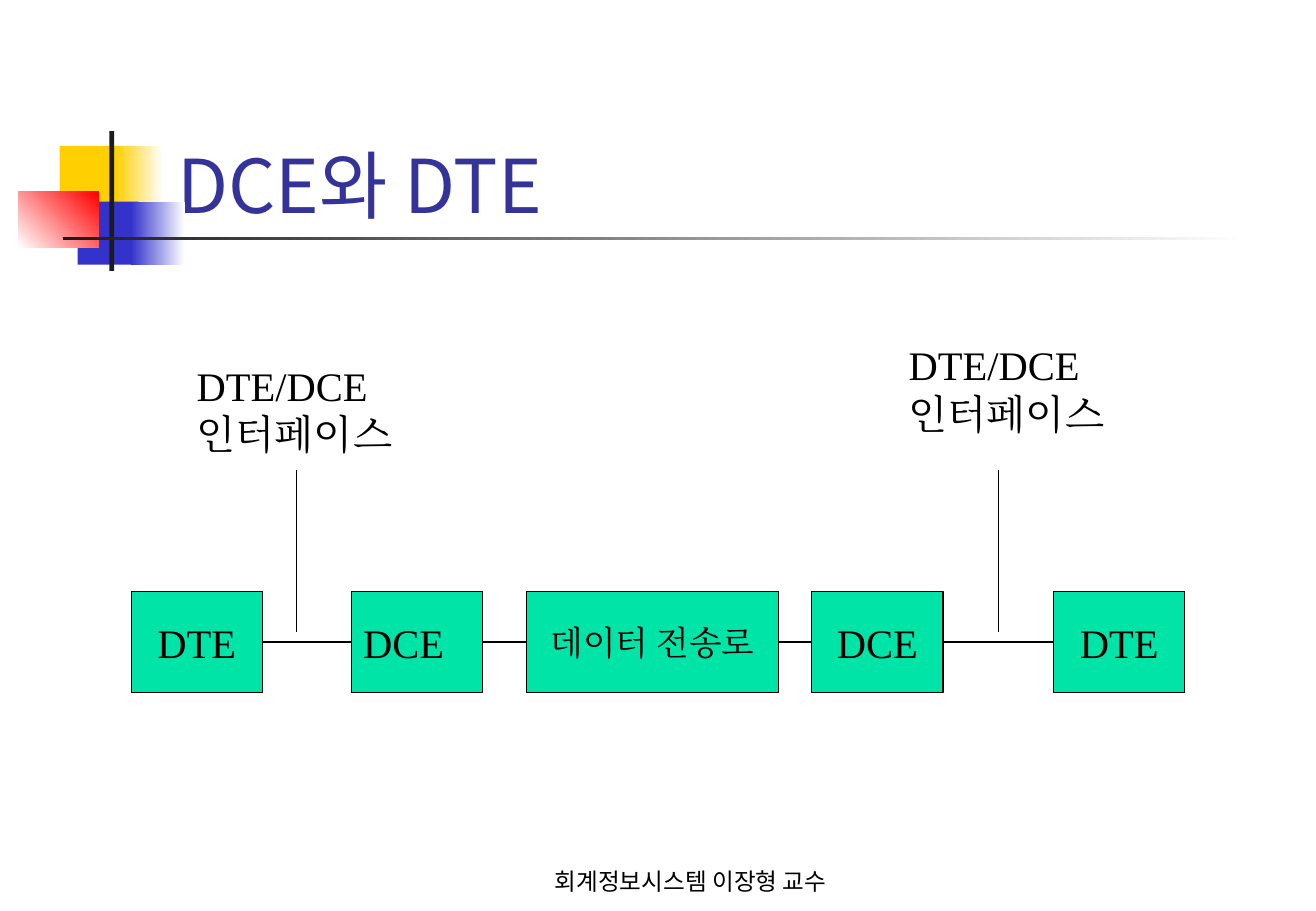
from itertools import pairwise

from lxml.etree import SubElement
from pptx import Presentation
from pptx.dml.color import RGBColor
from pptx.enum.shapes import MSO_CONNECTOR, MSO_SHAPE
from pptx.enum.text import MSO_ANCHOR, PP_ALIGN
from pptx.oxml.ns import qn
from pptx.util import Inches, Pt

COLORS = {
    "gold": "FFCF01", "blue": "3333CC", "red": "FF0000", "white": "FFFFFF",
    "ink": "1C1C1C", "title": "333399", "green": "00E4A8", "black": "000000",
}
SANS, SERIF = "Noto Sans CJK KR", "Times New Roman"

TITLE = "DCE와 DTE"
FOOTER = "회계정보시스템 이장형 교수"
INTERFACE = "DTE/DCE\n인터페이스"

# left, top, width, height, colours (two make a gradient), gradient angle
ORNAMENTS = [
    (0.49, 1.2, 0.52, 0.52, ["gold"], 0),
    (0.95, 1.2, 0.39, 0.52, ["gold", "white"], 0),
    (0.64, 1.66, 0.5, 0.52, ["blue"], 0),
    (1.08, 1.66, 0.44, 0.52, ["blue", "white"], 0),
    (0.15, 1.58, 0.66, 0.46, ["white", "red"], 45),
    (0.9, 1.08, 0.04, 1.15, ["ink"], 0),
    (0.52, 1.95, 9.75, 0.03, ["ink", "white"], 0),
]
# text, left, width, size, alignment
NODES = [
    ("DTE", 1.08, 1.08, 24, PP_ALIGN.CENTER),
    ("DCE", 2.89, 1.08, 24, PP_ALIGN.LEFT),
    ("데이터 전송로", 4.33, 2.08, 20, PP_ALIGN.CENTER),
    ("DCE", 6.68, 1.08, 24, PP_ALIGN.CENTER),
    ("DTE", 8.67, 1.08, 24, PP_ALIGN.CENTER),
]
NODE_TOP, NODE_H = 4.87, 0.83
# label left, label top, pointer x
INTERFACES = [(1.52, 2.92, 2.44), (7.38, 2.75, 8.22)]
POINTER_TOP, POINTER_BOTTOM = 3.87, 5.2


def rgb(name):
    return RGBColor.from_string(COLORS[name])


def write(shape, text, size, font, color="black", align=PP_ALIGN.LEFT,
          anchor=MSO_ANCHOR.TOP):
    tf = shape.text_frame
    tf.text = text
    tf.word_wrap = True
    tf.vertical_anchor = anchor
    for p in tf.paragraphs:
        p.alignment = align
        for r in p.runs:
            for key, value in {"size": Pt(size), "name": font}.items():
                setattr(r.font, key, value)
            r.font.color.rgb = rgb(color)
            SubElement(r.font._element, qn("a:ea"), typeface=font)


def add_rect(s, left, top, width, height, colors, angle=0):
    rect = s.shapes.add_shape(MSO_SHAPE.RECTANGLE, Inches(left), Inches(top),
                              Inches(width), Inches(height))
    rect.shadow.inherit = False
    rect.line.fill.background()
    if len(colors) == 1:
        rect.fill.solid()
        rect.fill.fore_color.rgb = rgb(colors[0])
    else:
        rect.fill.gradient()
        rect.fill.gradient_angle = angle
        for stop, color in zip(rect.fill.gradient_stops, colors):
            stop.color.rgb = rgb(color)
    return rect


def add_textbox(s, left, top, width, height):
    return s.shapes.add_textbox(Inches(left), Inches(top), Inches(width), Inches(height))


def outline(shape):
    shape.line.color.rgb = rgb("black")
    shape.line.width = Pt(0.75)


def add_line(s, x1, y1, x2, y2):
    line = s.shapes.add_connector(MSO_CONNECTOR.STRAIGHT, Inches(x1), Inches(y1),
                                  Inches(x2), Inches(y2))
    outline(line)
    SubElement(line._element.spPr, qn("a:effectLst"))
    return line


def main():
    prs = Presentation()
    prs.slide_width, prs.slide_height = Inches(10.83), Inches(7.5)
    s = prs.slides.add_slide(prs.slide_layouts[5])

    for left, top, width, height, colors, angle in ORNAMENTS:
        add_rect(s, left, top, width, height, colors, angle)

    title = s.shapes.title
    place = {"left": 1.36, "top": 0.68, "width": 9.23, "height": 1.25}
    for key, value in place.items():
        setattr(title, key, Inches(value))
    write(title, TITLE, 44, SANS, "title", anchor=MSO_ANCHOR.BOTTOM)

    write(add_textbox(s, 3.97, 6.92, 3.43, 0.5), FOOTER, 14, SANS,
          align=PP_ALIGN.CENTER, anchor=MSO_ANCHOR.BOTTOM)

    boxes = []
    for text, left, width, size, align in NODES:
        box = add_rect(s, left, NODE_TOP, width, NODE_H, ["green"])
        outline(box)
        write(box, text, size, SERIF, align=align, anchor=MSO_ANCHOR.MIDDLE)
        boxes.append(box)

    for a, b in pairwise(boxes):
        link = add_line(s, 0, 0, 0, 0)
        link.begin_connect(a, 3)
        link.end_connect(b, 1)

    for left, top, x in INTERFACES:
        write(add_textbox(s, left, top, 1.87, 0.9), INTERFACE, 24, SERIF)
        add_line(s, x, POINTER_TOP, x, POINTER_BOTTOM)

    prs.save("out.pptx")


if __name__ == "__main__":
    main()
